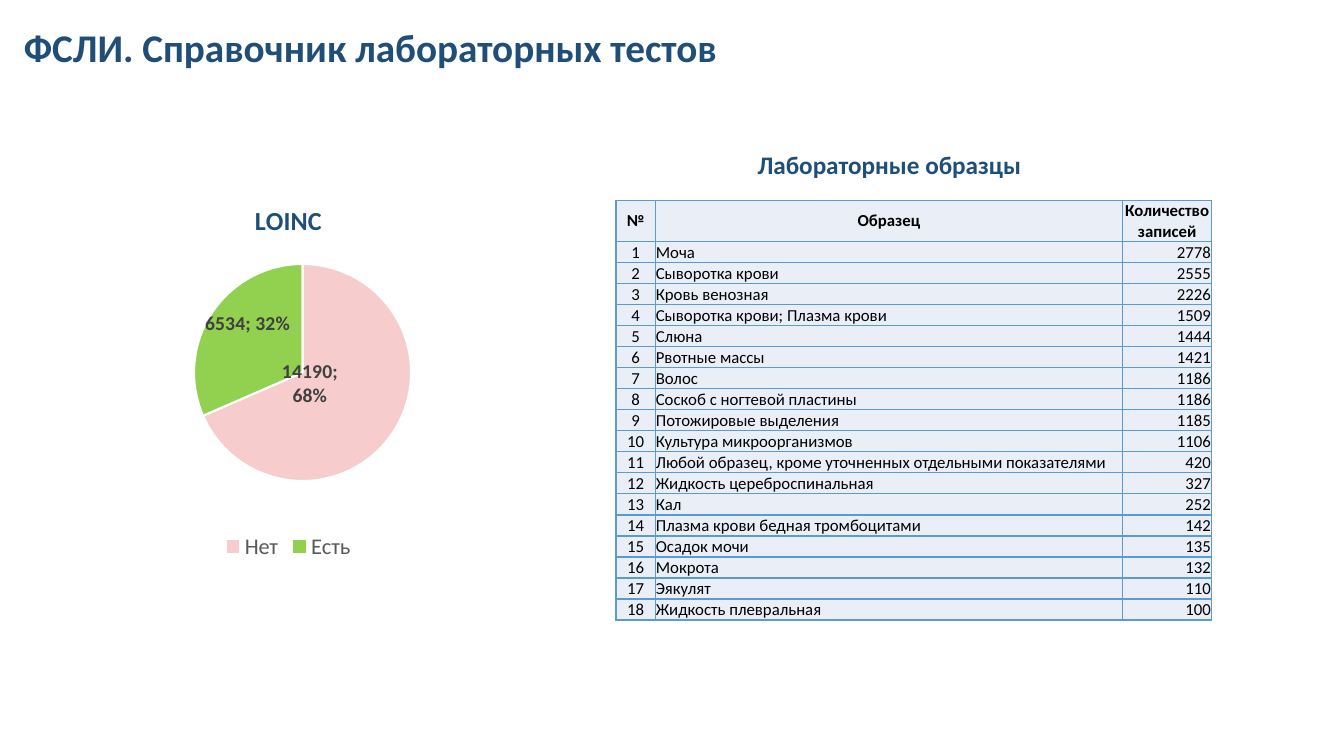
from pptx import Presentation
from pptx.chart.data import CategoryChartData
from pptx.dml.color import RGBColor
from pptx.enum.chart import XL_CHART_TYPE, XL_LABEL_POSITION, XL_LEGEND_POSITION
from pptx.enum.text import MSO_ANCHOR, PP_ALIGN
from pptx.oxml import parse_xml
from pptx.oxml.ns import nsdecls, qn
from pptx.util import Pt

LEFT, CENTER, RIGHT = PP_ALIGN.LEFT, PP_ALIGN.CENTER, PP_ALIGN.RIGHT
MIDDLE = MSO_ANCHOR.MIDDLE
PIE = XL_CHART_TYPE.PIE
LEGEND_BOTTOM = XL_LEGEND_POSITION.BOTTOM
LABEL_CENTER = XL_LABEL_POSITION.CENTER

NAVY = RGBColor(0x1F, 0x4E, 0x79)
BLACK = RGBColor(0x00, 0x00, 0x00)
WHITE = RGBColor(0xFF, 0xFF, 0xFF)
LEGEND_GRAY = RGBColor(0x59, 0x59, 0x59)
LABEL_GRAY = RGBColor(0x40, 0x40, 0x40)
PINK = RGBColor(0xF6, 0xCC, 0xCC)
GREEN = RGBColor(0x92, 0xD0, 0x50)
CELL_FILL = RGBColor(0xEA, 0xEF, 0xF7)
BORDER = RGBColor(0x5B, 0x9B, 0xD5)

SAMPLES = [
    ("Моча", 2778),
    ("Сыворотка крови", 2555),
    ("Кровь венозная", 2226),
    ("Сыворотка крови; Плазма крови", 1509),
    ("Слюна", 1444),
    ("Рвотные массы", 1421),
    ("Волос", 1186),
    ("Соскоб с ногтевой пластины", 1186),
    ("Потожировые выделения", 1185),
    ("Культура микроорганизмов", 1106),
    ("Любой образец, кроме уточненных отдельными показателями", 420),
    ("Жидкость цереброспинальная", 327),
    ("Кал", 252),
    ("Плазма крови бедная тромбоцитами", 142),
    ("Осадок мочи", 135),
    ("Мокрота", 132),
    ("Эякулят", 110),
    ("Жидкость плевральная", 100),
]


def set_font(font, size, color, bold=False):
    font.name = "Calibri"
    font.size = Pt(size)
    font.bold = bold
    font.color.rgb = color


def manual_layout(**values):
    """Build a chart layout element from fractions of the chart size."""
    parts = "".join(f'<c:{key} val="{value}"/>' for key, value in values.items())
    return parse_xml(
        f'<c:layout {nsdecls("c")}><c:manualLayout>{parts}</c:manualLayout></c:layout>')


deck = Presentation()
deck.slide_width, deck.slide_height = Pt(960), Pt(540)
slide = deck.slides.add_slide(deck.slide_layouts[6])

# Headings
HEADINGS = [
    ("ФСЛИ. Справочник лабораторных тестов", 10, 13, 914, 41, 28, LEFT),
    ("Лабораторные образцы", 490.5, 103, 289.5, 29, 18, CENTER),
]
for text, left, top, width, height, size, align in HEADINGS:
    box = slide.shapes.add_textbox(Pt(left), Pt(top), Pt(width), Pt(height))
    box.text_frame.word_wrap = True
    box.text_frame.text = text
    para = box.text_frame.paragraphs[0]
    para.alignment = align
    set_font(para.runs[0].font, size, NAVY, True)

# Pie chart
chart_data = CategoryChartData()
chart_data.categories = ["Нет", "Есть"]
chart_data.add_series("LOINC", [14190, 6534])
chart = slide.shapes.add_chart(
    PIE, Pt(36.5), Pt(131.5), Pt(339), Pt(272), chart_data).chart
set_font(chart.font, 10, BLACK)
chart.has_title = True
chart.chart_title.include_in_layout = False
chart.chart_title.text_frame.text = "LOINC"
set_font(chart.chart_title.text_frame.paragraphs[0].runs[0].font, 18.6, NAVY, True)
chart.has_legend = True
chart.legend.position = LEGEND_BOTTOM
chart.legend.include_in_layout = False
set_font(chart.legend.font, 16, LEGEND_GRAY)

plot_area = chart.plots[0]._element.getparent()
for layout in plot_area.findall(qn("c:layout")):
    plot_area.remove(layout)
plot_area.insert(0, manual_layout(
    layoutTarget="inner", xMode="edge", yMode="edge", x=0.3, y=0.21, w=0.46, h=0.57))

series = chart.plots[0].series[0]
labels = series.data_labels
set_font(labels.font, 14, LABEL_GRAY, True)
labels.show_value = labels.show_percentage = True
labels.position = LABEL_CENTER

LABEL_SHIFTS = [(-0.08, -0.05), (-0.02, -0.05)]
for index, (color, (shift_x, shift_y)) in enumerate(zip([PINK, GREEN], LABEL_SHIFTS)):
    point = series.points[index]
    point.format.fill.solid()
    point.format.fill.fore_color.rgb = color
    point.format.line.color.rgb = WHITE
    point.format.line.width = Pt(1.5)
    set_font(point.data_label.font, 14, LABEL_GRAY, True)
    point.data_label.position = LABEL_CENTER
    label = labels._element.findall(qn("c:dLbl"))[index]
    label.find(qn("c:idx")).addnext(manual_layout(x=shift_x, y=shift_y))
    label.find(qn("c:showPercent")).set("val", "1")

for element in [labels._element, *labels._element.findall(qn("c:dLbl"))]:
    separator = parse_xml(f'<c:separator {nsdecls("c")}>; </c:separator>')
    element.find(qn("c:showBubbleSize")).addnext(separator)

# Sample table
rows = [("№", "Образец", "Количество записей")]
rows += [(number, *sample) for number, sample in enumerate(SAMPLES, 1)]
COLUMN_WIDTHS = [28, 334, 63.5]
HEADER_HEIGHT, ROW_HEIGHT = 29.5, 15.05
table = slide.shapes.add_table(
    len(rows), 3, Pt(440), Pt(143), Pt(sum(COLUMN_WIDTHS)),
    Pt(HEADER_HEIGHT + ROW_HEIGHT * len(SAMPLES))).table
for column, width in zip(table.columns, COLUMN_WIDTHS):
    column.width = Pt(width)

for row_index, values in enumerate(rows):
    header = row_index == 0
    table.rows[row_index].height = Pt(HEADER_HEIGHT if header else ROW_HEIGHT)
    for column_index, align in enumerate([CENTER, LEFT, RIGHT]):
        cell = table.cell(row_index, column_index)
        cell.margin_left = cell.margin_right = cell.margin_top = Pt(0.5)
        cell.margin_bottom = Pt(0)
        cell.vertical_anchor = MIDDLE
        cell.text_frame.text = str(values[column_index])
        para = cell.text_frame.paragraphs[0]
        para.alignment = CENTER if header else align
        set_font(para.runs[0].font, 12, BLACK, header)
        properties = cell._tc.get_or_add_tcPr()
        for side in ("lnL", "lnR", "lnT", "lnB"):
            properties.append(parse_xml(
                f'<a:{side} {nsdecls("a")} w="{Pt(1)}"><a:solidFill>'
                f'<a:srgbClr val="{BORDER}"/></a:solidFill></a:{side}>'))
        cell.fill.solid()
        cell.fill.fore_color.rgb = CELL_FILL

deck.save("out.pptx")
